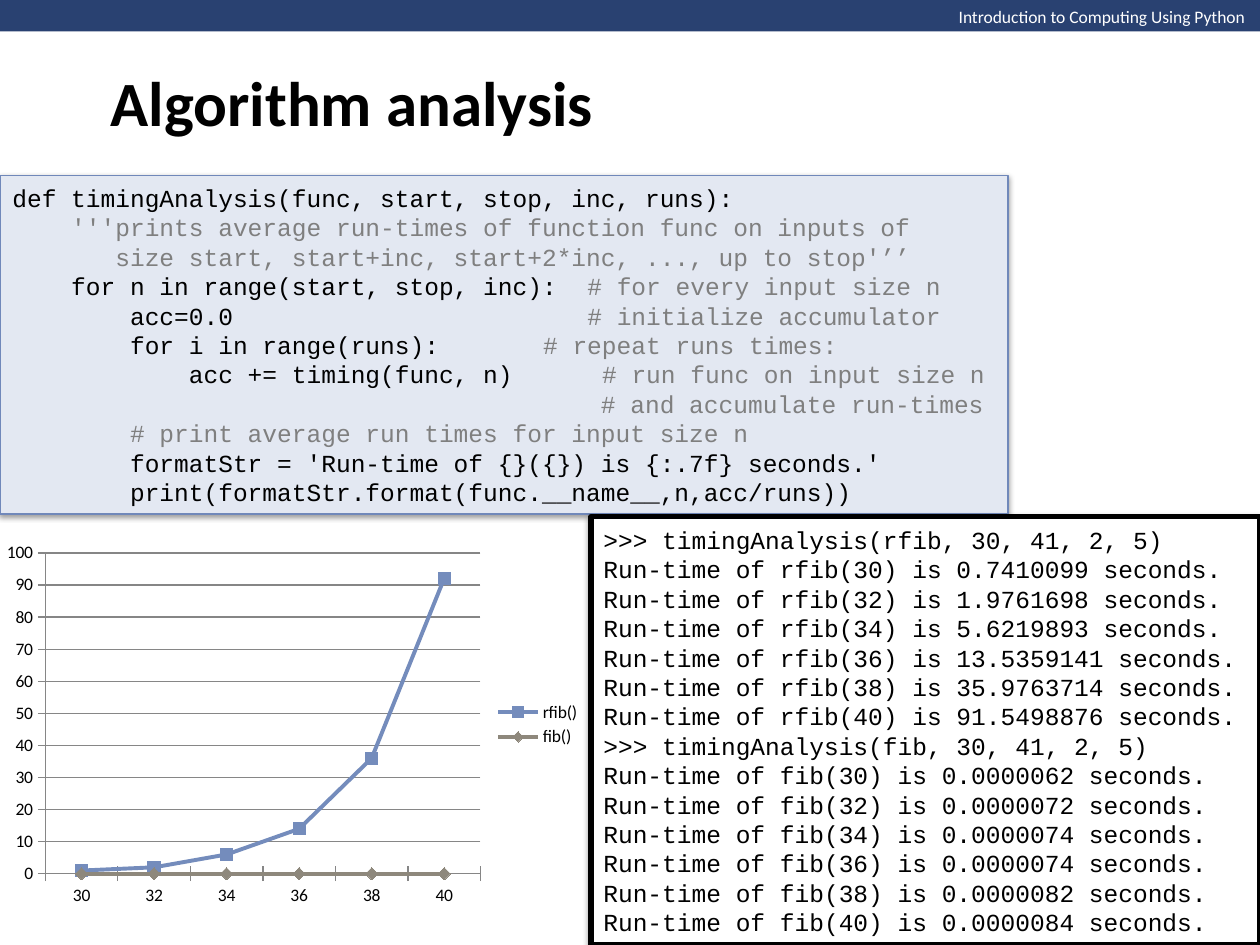
from lxml import etree
from pptx import Presentation
from pptx.chart.data import CategoryChartData
from pptx.dml.color import RGBColor
from pptx.enum.chart import XL_CHART_TYPE, XL_LEGEND_POSITION, XL_MARKER_STYLE, XL_TICK_MARK
from pptx.enum.shapes import MSO_SHAPE
from pptx.enum.text import MSO_ANCHOR, PP_ALIGN
from pptx.oxml.ns import qn
from pptx.util import Inches, Pt

RECTANGLE = MSO_SHAPE.RECTANGLE
LEFT = PP_ALIGN.LEFT
MIDDLE, TOP = MSO_ANCHOR.MIDDLE, MSO_ANCHOR.TOP
LINE_MARKERS = XL_CHART_TYPE.LINE_MARKERS
LEGEND_RIGHT = XL_LEGEND_POSITION.RIGHT
CROSS = XL_TICK_MARK.CROSS
SQUARE, DIAMOND = XL_MARKER_STYLE.SQUARE, XL_MARKER_STYLE.DIAMOND

COLORS = {
    "black": "000000", "white": "FFFFFF", "comment": "7F7F7F",
    "band": "294171", "code_fill": "E3E8F2", "code_line": "7088BA",
    "rfib": "748CBC", "fib": "8E887C", "axis": "868686",
}
TITLE_ONLY = 5

CODE = [
    ("def timingAnalysis(func, start, stop, inc, runs):", ""),
    ("", "    '''prints average run-times of function func on inputs of"),
    ("", "       size start, start+inc, start+2*inc, ..., up to stop'’’"),
    ("    for n in range(start, stop, inc):  ", "# for every input size n"),
    ("        acc=0.0                        ", "# initialize accumulator"),
    ("        for i in range(runs):       ", "# repeat runs times:"),
    ("            acc += timing(func, n)      ", "# run func on input size n"),
    ("", "                                        # and accumulate run-times"),
    ("", "        # print average run times for input size n"),
    ("        formatStr = 'Run-time of {}({}) is {:.7f} seconds.'", ""),
    ("        print(formatStr.format(func.__name__,n,acc/runs))", ""),
]
INPUT_SIZES = range(30, 41, 2)
RUN_TIMES = {
    "rfib": [0.7410099, 1.9761698, 5.6219893, 13.5359141, 35.9763714, 91.5498876],
    "fib": [0.0000062, 0.0000072, 0.0000074, 0.0000074, 0.0000082, 0.0000084],
}
MARKERS = {"rfib": SQUARE, "fib": DIAMOND}


def color(name):
    return RGBColor.from_string(COLORS[name])


def write_text(frame, lines, size=14, font="Courier New", bold=False,
               anchor=MIDDLE, wrap=True, spacing=None):
    frame.word_wrap = wrap
    frame.vertical_anchor = anchor
    for index, runs in enumerate(lines):
        paragraph = frame.add_paragraph() if index else frame.paragraphs[0]
        paragraph.alignment = LEFT
        if spacing:
            paragraph.line_spacing = Pt(spacing)
        for text, color_name in runs:
            run = paragraph.add_run()
            run.text = text
            run.font.size = Pt(size)
            run.font.name = font
            run.font.bold = bold
            run.font.color.rgb = color(color_name)


class SlideBuilder:
    font = "Calibri"
    code_spacing = 16.8

    def __init__(self, presentation):
        self.slide = presentation.slides.add_slide(presentation.slide_layouts[TITLE_ONLY])

    def title(self, text, left, top, width, height):
        shape = self.slide.shapes.title
        shape.left, shape.top = Inches(left), Inches(top)
        shape.width, shape.height = Inches(width), Inches(height)
        write_text(shape.text_frame, [[(text, "black")]], size=36, font=self.font, bold=True)

    def label(self, text, left, top, width, height):
        shape = self.slide.shapes.add_textbox(
            Inches(left), Inches(top), Inches(width), Inches(height))
        write_text(shape.text_frame, [[(text, "white")]], size=10, font=self.font,
                   anchor=TOP, wrap=False)

    def box(self, left, top, width, height, fill, line=None, line_width=1):
        shape = self.slide.shapes.add_shape(
            RECTANGLE, Inches(left), Inches(top), Inches(width), Inches(height))
        shape.shadow.inherit = False
        shape.fill.solid()
        shape.fill.fore_color.rgb = color(fill)
        if line:
            shape.line.color.rgb = color(line)
            shape.line.width = Pt(line_width)
        else:
            shape.line.fill.background()
        return shape

    def code_box(self, lines, *place, **style):
        shape = self.box(*place, **style)
        effects = shape.element.spPr.find(qn("a:effectLst"))
        shadow = etree.SubElement(effects, qn("a:outerShdw"), blurRad="40000",
                                  dist="20000", dir="5400000", rotWithShape="0")
        shade = etree.SubElement(shadow, qn("a:srgbClr"), val=COLORS["black"])
        etree.SubElement(shade, qn("a:alpha"), val="38000")
        write_text(shape.text_frame, lines, spacing=self.code_spacing)

    def line_chart(self, left, top, width, height):
        data = CategoryChartData()
        data.categories = list(INPUT_SIZES)
        for name, times in RUN_TIMES.items():
            data.add_series(f"{name}()", [round(time) for time in times])
        chart = self.slide.shapes.add_chart(
            LINE_MARKERS, Inches(left), Inches(top), Inches(width), Inches(height), data).chart
        chart.has_title = False
        chart.font.size = Pt(10)
        chart.font.name = self.font
        chart.font.color.rgb = color("black")
        chart.has_legend = True
        chart.legend.position = LEGEND_RIGHT
        chart.legend.include_in_layout = False
        chart.plots[0].vary_by_categories = False
        for axis in (chart.category_axis, chart.value_axis):
            axis.major_tick_mark = CROSS
            axis.format.line.color.rgb = color("axis")
        chart.value_axis.has_major_gridlines = True
        chart.value_axis.major_gridlines.format.line.color.rgb = color("axis")
        chart.value_axis.minimum_scale = 0
        chart.value_axis.maximum_scale = 100
        chart.value_axis.major_unit = 10
        for series, name in zip(chart.plots[0].series, RUN_TIMES):
            series.smooth = False
            series.format.line.color.rgb = color(name)
            series.format.line.width = Pt(2.25)
            marker = series.marker
            marker.style = MARKERS[name]
            marker.size = 7
            marker.format.fill.solid()
            marker.format.fill.fore_color.rgb = color(name)
            marker.format.line.color.rgb = color(name)


def session_lines():
    lines = []
    for name, times in RUN_TIMES.items():
        lines.append(f">>> timingAnalysis({name}, 30, 41, 2, 5)")
        lines += [f"Run-time of {name}({size}) is {time:.7f} seconds."
                  for size, time in zip(INPUT_SIZES, times)]
    return [[(line, "black")] for line in lines]


def code_lines():
    return [[(text, name) for text, name in zip(line, ("black", "comment")) if text]
            for line in CODE]


def main():
    presentation = Presentation()
    presentation.slide_width = Inches(10)
    presentation.slide_height = Inches(7.5)
    builder = SlideBuilder(presentation)
    builder.code_box(code_lines(), 0, 1.39, 8, 2.69,
                     fill="code_fill", line="code_line", line_width=0.75)
    builder.box(0, 0, 10, 0.25, fill="band")
    builder.label("Introduction to Computing Using Python", 7.51, 0, 2.49, 0.27)
    builder.title("Algorithm analysis", 0.78, 0, 8.5, 1.61)
    builder.line_chart(-0.04, 4.25, 4.75, 3)
    builder.code_box(session_lines(), 4.69, 4.1, 5.31, 3.4,
                     fill="white", line="black", line_width=3)
    presentation.save("out.pptx")


if __name__ == "__main__":
    main()
